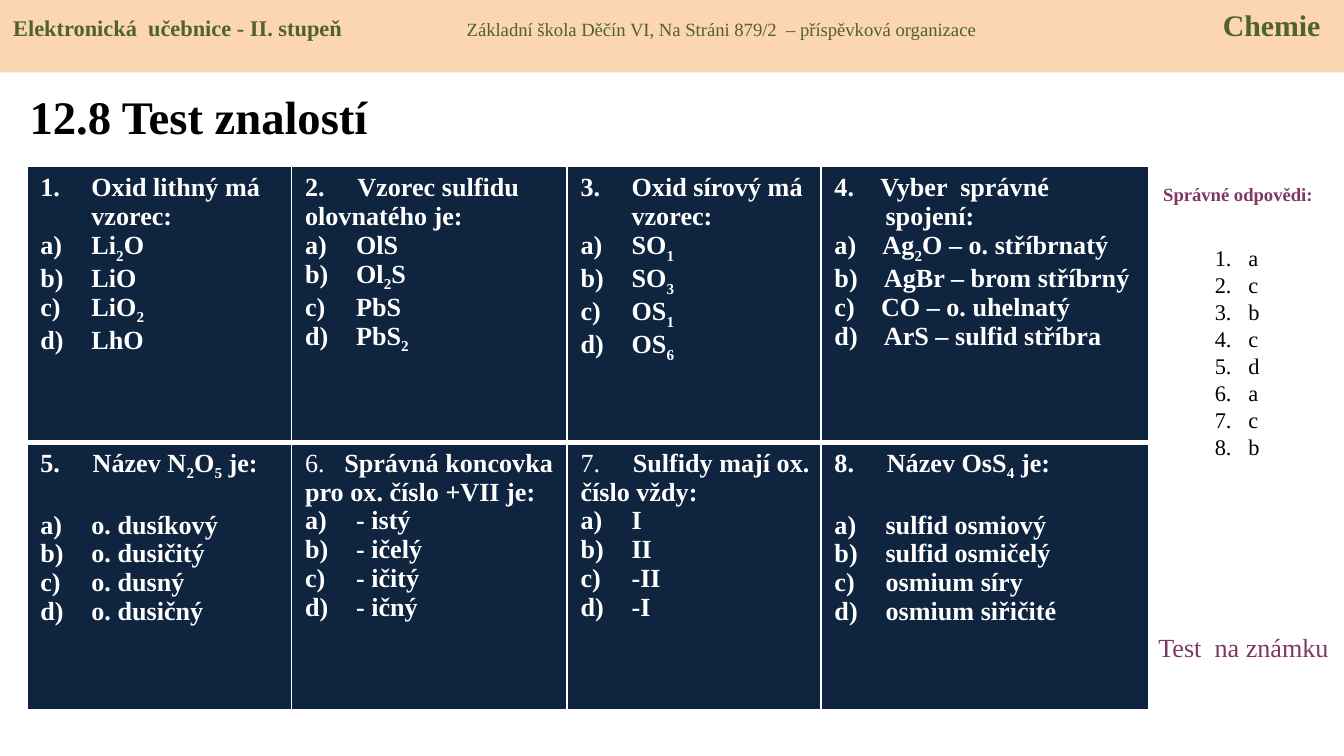
"""Build a chemistry knowledge-test slide with a question table and an answer key."""
import pptx
import pptx.util
import pptx.dml.color
import pptx.enum.shapes
import pptx.enum.text
import pptx.oxml.ns
from lxml import etree

Inches = pptx.util.Inches
Pt = pptx.util.Pt
RGBColor = pptx.dml.color.RGBColor
PP_ALIGN = pptx.enum.text.PP_ALIGN
MSO_ANCHOR = pptx.enum.text.MSO_ANCHOR
qn = pptx.oxml.ns.qn

PEACH = RGBColor(0xFC, 0xD5, 0xB5)
GREEN = RGBColor(0x4F, 0x62, 0x28)
PLUM = RGBColor(0x81, 0x37, 0x63)
NAVY = RGBColor(0x0F, 0x24, 0x3E)
WHITE = RGBColor(0xFF, 0xFF, 0xFF)
BLACK = RGBColor(0, 0, 0)


def write(p, text, size=14, color=BLACK, bold=False, gap=0):
    """Add text; an underscore lowers the next character, gap widens a space after it."""
    head, *tails = text.split("_")
    pieces = [(head, {})]
    for tail in tails:
        pieces += [(tail[0], {"baseline": "-25000"}), (tail[1:], {})]
    if gap:
        pieces.append((" ", {"spc": str(round(gap * 100))}))
    for piece, attributes in pieces:
        if piece:
            r = p.add_run()
            r.text = piece
            r.font.name = "Times New Roman"
            r.font.size = Pt(size)
            r.font.bold = bold
            r.font.color.rgb = color
            for key, value in attributes.items():
                r.font._element.set(key, value)


def set_list(p, indent, scheme=None, start=1):
    """Give a paragraph a hanging indent and automatic numbering."""
    pPr = p._p.get_or_add_pPr()
    pPr.set("marL", str(Inches(indent)))
    pPr.set("indent", str(-Inches(indent)))
    if scheme:
        bullet = etree.SubElement(pPr, qn("a:buAutoNum"), type=scheme)
        if start > 1:
            bullet.set("startAt", str(start))


prs = pptx.Presentation()
prs.slide_width = Inches(10)
prs.slide_height = Inches(10) * 9 // 16
s = prs.slides.add_slide(prs.slide_layouts[5])

title = s.shapes.title
title.left, title.top = Inches(0.12), Inches(0.57)
title.width, title.height = Inches(3.19), Inches(0.59)
tf = title.text_frame
tf.vertical_anchor = MSO_ANCHOR.MIDDLE
tf.paragraphs[0].alignment = PP_ALIGN.LEFT
write(tf.paragraphs[0], "12.8 Test znalostí", size=25, bold=True)

header = s.shapes.add_shape(pptx.enum.shapes.MSO_SHAPE.RECTANGLE, 0, 0, Inches(10), Inches(0.54))
header.shadow.inherit = False
header.fill.solid()
header.fill.fore_color.rgb = PEACH
header.line.fill.background()
tf = header.text_frame
tf.vertical_anchor = MSO_ANCHOR.TOP
p = tf.paragraphs[0]
p.alignment = PP_ALIGN.LEFT
write(p, "Elektronická  učebnice - II. stupeň", size=12, color=GREEN, bold=True, gap=63.5)
write(p, "Základní škola Děčín VI, Na Stráni 879/2  – příspěvková organizace",
      size=10, color=GREEN, gap=130)
write(p, "Chemie", size=16, color=GREEN, bold=True)

QUESTIONS = [
    ("Oxid lithný má vzorec:", ["Li_2O", "LiO", "LiO_2", "LhO"]),
    ("Vzorec sulfidu olovnatého je:", ["OlS", "Ol_2S", "PbS", "PbS_2"]),
    ("Oxid sírový má vzorec:", ["SO_1", "SO_3", "OS_1", "OS_6"]),
    ("Vyber  správné spojení:",
     ["Ag_2O – o. stříbrnatý", "AgBr – brom stříbrný", "CO – o. uhelnatý", "ArS – sulfid stříbra"]),
    ("Název N_2O_5 je:", ["o. dusíkový", "o. dusičitý", "o. dusný", "o. dusičný"]),
    ("Správná koncovka pro ox. číslo +VII je:", ["- istý", "- ičelý", "- ičitý", "- ičný"]),
    ("Sulfidy mají ox. číslo vždy:", ["I", "II", "-II", "-I"]),
    ("Název OsS_4 je:", ["sulfid osmiový", "sulfid osmičelý", "osmium síry", "osmium siřičité"]),
]
NUMBER_GAPS = {2: 14, 4: 10.5, 5: 14, 6: 7, 7: 14, 8: 14}
HANGING = (4, 5)
LIGHT_NUMBERS = (6, 7)
SPACED_STEMS = (5, 8)
TYPED_LETTERS = 4
INDENT = 0.38
COLUMNS = [1.97, 2.05, 1.89, 2.44]
ROWS = [2.05, 1.99]

frame = s.shapes.add_table(len(ROWS), len(COLUMNS), Inches(0.2), Inches(1.24),
                           Inches(sum(COLUMNS)), Inches(sum(ROWS)))
table = frame.table
for column, width in zip(table.columns, COLUMNS):
    column.width = Inches(width)
for row, height in zip(table.rows, ROWS):
    row.height = Inches(height)

for number, (stem, options) in enumerate(QUESTIONS, 1):
    row, col = divmod(number - 1, len(COLUMNS))
    cell = table.cell(row, col)
    cell.margin_left, cell.margin_right = Inches(0.1), Inches(0.07)
    cell.margin_top = cell.margin_bottom = Inches(0.05)
    tcPr = cell._tc.get_or_add_tcPr()
    for side in "LRTB":
        thick = (row, side) in ((0, "B"), (1, "T"))
        line = etree.SubElement(tcPr, qn("a:ln" + side), w=str(Pt(3 if thick else 1)))
        fill = etree.SubElement(line, qn("a:solidFill"))
        etree.SubElement(fill, qn("a:srgbClr"), val=str(WHITE))
    cell.fill.solid()
    cell.fill.fore_color.rgb = NAVY

    p = cell.text_frame.paragraphs[0]
    if number in NUMBER_GAPS:
        set_list(p, INDENT if number in HANGING else 0)
        write(p, f"{number}.", color=WHITE, bold=number not in LIGHT_NUMBERS,
              gap=NUMBER_GAPS[number])
    else:
        set_list(p, INDENT, "arabicPeriod", number)
    write(p, stem, color=WHITE, bold=True)
    if number in SPACED_STEMS:
        p.space_after = Pt(15.5)
    for letter, option in zip("abcd", options):
        p = cell.text_frame.add_paragraph()
        if number == TYPED_LETTERS:
            set_list(p, INDENT)
            write(p, f"{letter})", color=WHITE, bold=True, gap=10.5)
        else:
            set_list(p, INDENT, "alphaLcParenR")
        write(p, option, color=WHITE, bold=True)

sp = s.shapes.add_textbox(Inches(8.5), Inches(1.31), Inches(1.42), Inches(0.27))
sp.text_frame.word_wrap = True
p = sp.text_frame.paragraphs[0]
p.alignment = PP_ALIGN.CENTER
write(p, "Správné odpovědi:", size=10, color=PLUM, bold=True)

sp = s.shapes.add_textbox(Inches(8.94), Inches(1.77), Inches(0.55), Inches(2.12))
tf = sp.text_frame
tf.word_wrap = True
for i, answer in enumerate("acbcdacb"):
    p = tf.add_paragraph() if i else tf.paragraphs[0]
    set_list(p, 0.25, "arabicPeriod")
    write(p, answer, size=12)

sp = s.shapes.add_textbox(Inches(8.52), Inches(4.65), Inches(1.5), Inches(0.34))
sp.text_frame.word_wrap = True
write(sp.text_frame.paragraphs[0], "Test  na známku", color=PLUM)

prs.save("out.pptx")
